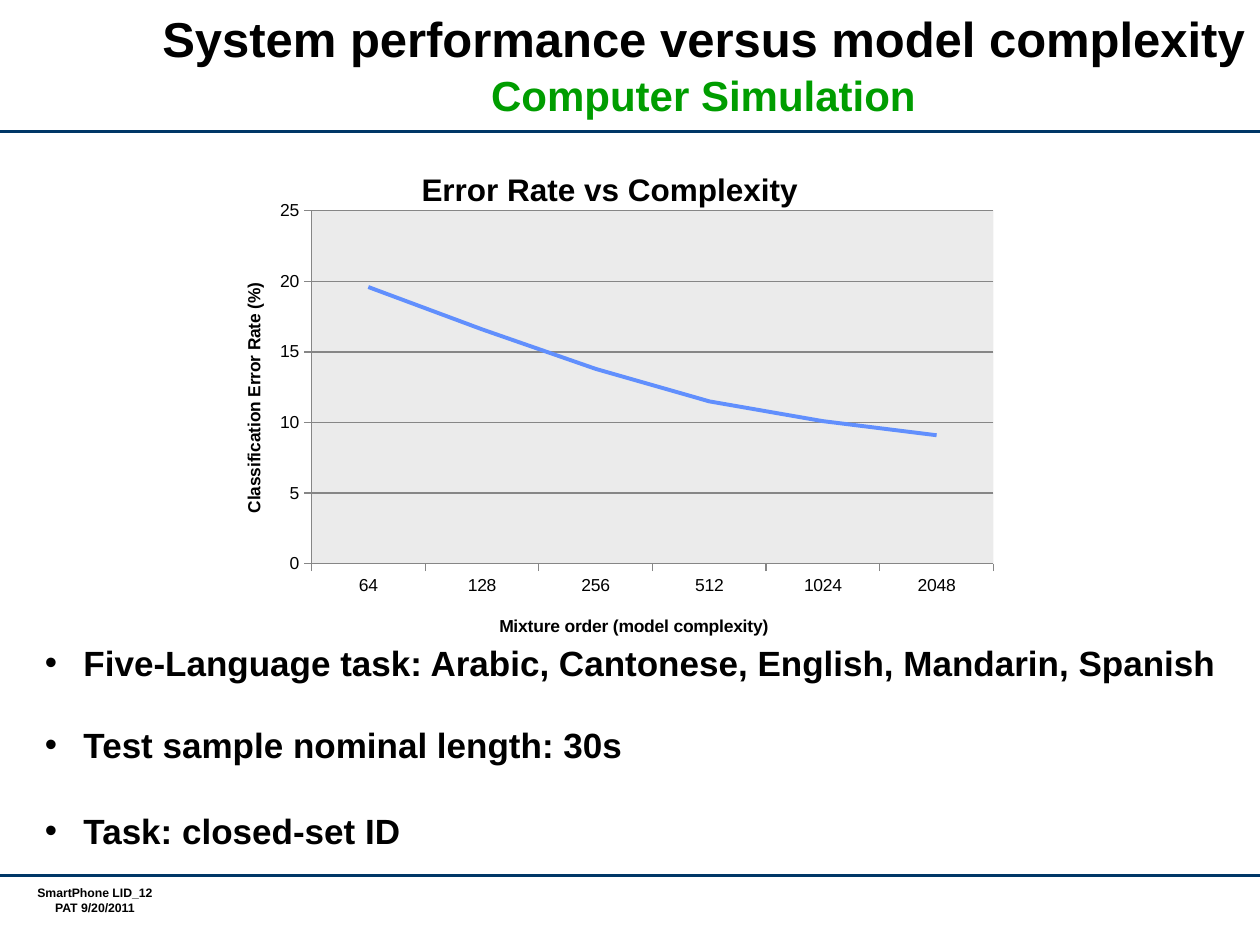
from lxml import etree
from pptx import Presentation
from pptx.chart.data import CategoryChartData
from pptx.dml.color import RGBColor
from pptx.enum.chart import XL_CHART_TYPE, XL_TICK_MARK
from pptx.enum.shapes import MSO_CONNECTOR
from pptx.enum.text import MSO_ANCHOR, MSO_AUTO_SIZE, PP_ALIGN
from pptx.oxml import parse_xml
from pptx.oxml.ns import nsdecls, qn
from pptx.util import Pt

LINE_CHART = XL_CHART_TYPE.LINE
STRAIGHT = MSO_CONNECTOR.STRAIGHT
OUTSIDE, NO_TICK = XL_TICK_MARK.OUTSIDE, XL_TICK_MARK.NONE
CENTER, LEFT = PP_ALIGN.CENTER, PP_ALIGN.LEFT
TOP, MIDDLE = MSO_ANCHOR.TOP, MSO_ANCHOR.MIDDLE
FIXED_SIZE = MSO_AUTO_SIZE.NONE

BLACK = RGBColor(0x00, 0x00, 0x00)
GREEN = RGBColor(0x00, 0x9D, 0x00)
NAVY = RGBColor(0x00, 0x37, 0x67)
BLUE = RGBColor(0x61, 0x8F, 0xFD)
GRAY = RGBColor(0x86, 0x86, 0x86)
FONT = "Arial"

TITLE_LINES = [("System performance versus model complexity", 28, BLACK),
               ("Computer Simulation", 24, GREEN)]
# Each bullet with the space before it
BULLETS = [("Five-Language task: Arabic, Cantonese, English, Mandarin, Spanish", 0),
           ("Test sample nominal length: 30s", 23),
           ("Task: closed-set ID", 25)]
FOOTER = ["SmartPhone LID_12", "PAT 9/20/2011"]
ERROR_RATES = {"64": 19.6, "128": 16.6, "256": 13.8,
               "512": 11.5, "1024": 10.1, "2048": 9.1}
# Text, size, then left and top as fractions of the chart
CHART_TITLE = ("Error Rate vs Complexity", 18, 0.25, 0.01)
CATEGORY_TITLE = ("Mixture order (model complexity)", 10, 0.35, 0.95)
VALUE_TITLE = ("Classification Error Rate (%)", 10, 0.03, 0.26)
PLOT_AREA = {"x": 0.12, "y": 0.11, "w": 0.85, "h": 0.74}

PAGE_WIDTH, PAGE_HEIGHT = 720, 540
RULE_LEFT, RULE_RIGHT = -29, 745
RULE_TOPS = [75, 500.5]
TITLE_BOX = (84, 8.5, 636, 60)
BULLET_BOX = (18.5, 363, 692, 126)
FOOTER_BOX = (28, 506, 52.5, 27.5)
CHART_BOX = (123, 90.5, 458.5, 276)
BULLET_INDENT = 22


def place(shape, box):
    for side, length in zip(("left", "top", "width", "height"), box):
        setattr(shape, side, Pt(length))


def format_font(font, size, color=BLACK, bold=True):
    values = {"name": FONT, "size": Pt(size), "bold": bold}
    for name, value in values.items():
        setattr(font, name, value)
    font.color.rgb = color


def format_frame(frame, anchor, wrap=True, margin=None):
    values = {"auto_size": FIXED_SIZE, "word_wrap": wrap, "vertical_anchor": anchor}
    if margin is not None:
        for side in ("left", "top", "right", "bottom"):
            values["margin_" + side] = Pt(margin)
    for name, value in values.items():
        setattr(frame, name, value)


def add_rule(page, top):
    rule = page.shapes.add_connector(STRAIGHT, Pt(RULE_LEFT), Pt(top),
                                     Pt(RULE_RIGHT), Pt(top))
    rule.line.color.rgb = NAVY
    rule.line.width = Pt(1.75)
    etree.SubElement(rule._element.spPr, qn("a:effectLst"))


def add_footer(page):
    box = page.shapes.add_textbox(*map(Pt, FOOTER_BOX))
    format_frame(box.text_frame, TOP, wrap=False, margin=0)
    box.text_frame.text = "\n".join(FOOTER)
    for para in box.text_frame.paragraphs:
        para.alignment = CENTER
        format_font(para.font, 7)


def fill_title(title):
    place(title, TITLE_BOX)
    format_frame(title.text_frame, MIDDLE, margin=0)
    para = title.text_frame.paragraphs[0]
    para.alignment = CENTER
    para.line_spacing = Pt(30)
    for index, (text, size, color) in enumerate(TITLE_LINES):
        if index:
            para.add_line_break()
        span = para.add_run()
        span.text = text
        format_font(span.font, size, color)


def fill_bullets(body):
    place(body, BULLET_BOX)
    format_frame(body.text_frame, TOP)
    body.text_frame.text = "\n".join(text for text, _ in BULLETS)
    for para, (_, space) in zip(body.text_frame.paragraphs, BULLETS):
        properties = para._p.get_or_add_pPr()
        properties.set("marL", str(Pt(BULLET_INDENT)))
        properties.set("indent", str(-Pt(BULLET_INDENT)))
        etree.SubElement(properties, qn("a:buChar"), char="•")
        para.alignment = LEFT
        para.space_before = Pt(space)
        format_font(para.font, 20)


def manual_layout(positions, inner=False):
    """Return a c:layout element that fixes positions as chart fractions."""
    target = '<c:layoutTarget val="inner"/>' if inner else ""
    modes = "".join(f'<c:{key}Mode val="edge"/>' for key in ("x", "y"))
    values = "".join(f'<c:{key} val="{value}"/>' for key, value in positions.items())
    return parse_xml(f'<c:layout {nsdecls("c")}><c:manualLayout>'
                     f'{target}{modes}{values}</c:manualLayout></c:layout>')


def replace_layout(parent, layout, index):
    for old in parent.findall(qn("c:layout")):
        parent.remove(old)
    parent.insert(index, layout)


def set_title(title, content):
    text, size, left, top = content
    title.text_frame.text = text
    format_font(title.text_frame.paragraphs[0].runs[0].font, size)
    replace_layout(title._element, manual_layout({"x": left, "y": top}), 1)


def add_error_chart(page):
    data = CategoryChartData()
    data.categories = list(ERROR_RATES)
    data.add_series("Series 1", list(ERROR_RATES.values()))
    frame = page.shapes.add_chart(LINE_CHART, *map(Pt, CHART_BOX), data)
    chart = frame.chart
    chart.has_legend = False
    format_font(chart.font, 10, bold=False)
    chart.has_title = True
    set_title(chart.chart_title, CHART_TITLE)

    categories, values = chart.category_axis, chart.value_axis
    for axis, title in ((categories, CATEGORY_TITLE), (values, VALUE_TITLE)):
        set_title(axis.axis_title, title)
        axis.major_tick_mark = OUTSIDE
        axis.minor_tick_mark = NO_TICK
        axis.format.line.color.rgb = GRAY
    values.minimum_scale, values.maximum_scale, values.major_unit = 0, 25, 5
    values.tick_labels.number_format = "0"
    values.tick_labels.number_format_is_linked = False
    values.has_major_gridlines = True
    values.major_gridlines.format.line.color.rgb = GRAY

    plot = chart.plots[0]
    plot.vary_by_categories = False
    series = plot.series[0]
    series.smooth = False
    series.format.line.color.rgb = BLUE
    series.format.line.width = Pt(2.25)

    area = chart._chartSpace.chart.plotArea
    replace_layout(area, manual_layout(PLOT_AREA, inner=True), 0)
    area.append(parse_xml(
        f'<c:spPr {nsdecls("c", "a")}><a:solidFill><a:srgbClr val="D9D9D9">'
        '<a:alpha val="50000"/></a:srgbClr></a:solidFill></c:spPr>'))


def main():
    deck = Presentation()
    deck.slide_width, deck.slide_height = Pt(PAGE_WIDTH), Pt(PAGE_HEIGHT)
    page = deck.slides.add_slide(deck.slide_layouts[1])
    fill_title(page.shapes.title)
    fill_bullets(page.placeholders[1])
    add_footer(page)
    for top in RULE_TOPS:
        add_rule(page, top)
    add_error_chart(page)
    deck.save("out.pptx")


if __name__ == "__main__":
    main()
